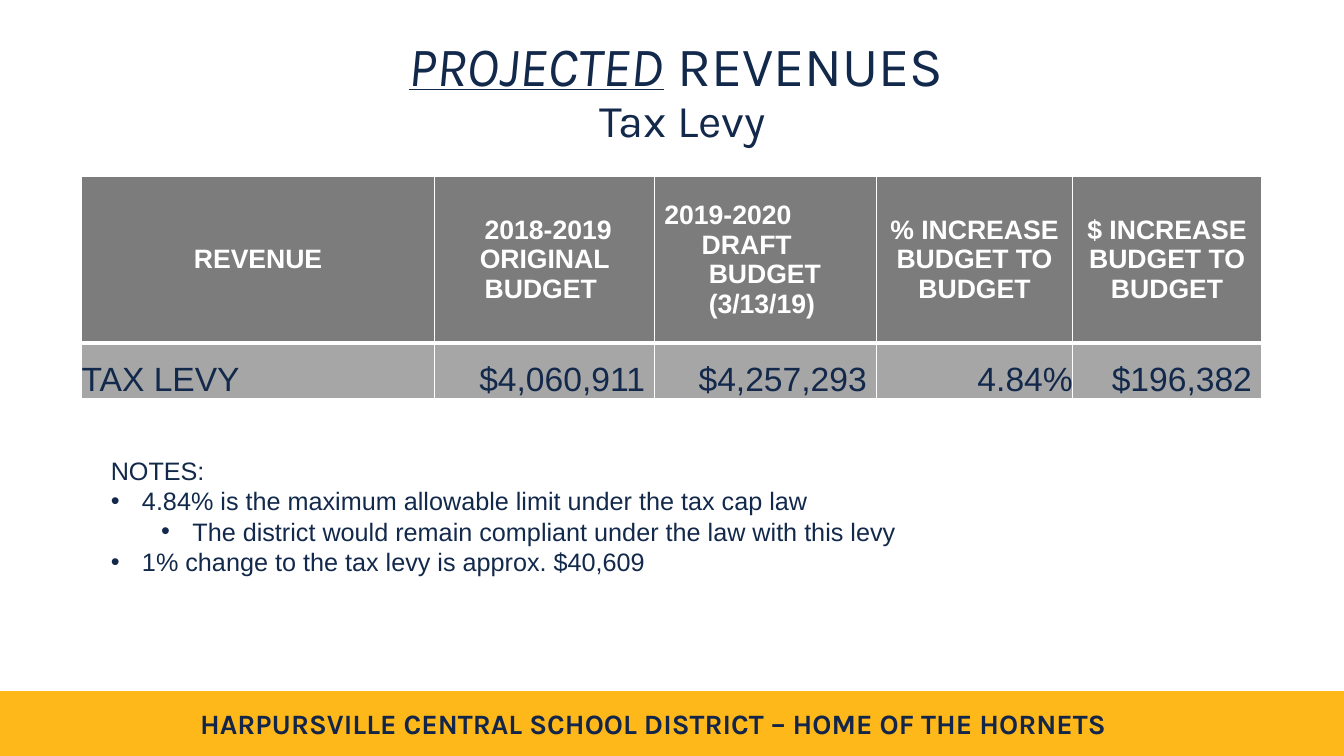
from lxml.etree import SubElement
from pptx import Presentation
from pptx.dml.color import RGBColor
from pptx.enum.shapes import MSO_SHAPE as Shape
from pptx.enum.text import MSO_ANCHOR as Anchor, PP_ALIGN as Align
from pptx.oxml.ns import qn
from pptx.util import Inches, Pt

NAVY = RGBColor(0x13, 0x29, 0x4B)
FOOTER_NAVY = RGBColor(0x13, 0x26, 0x49)
GOLD = RGBColor(0xFF, 0xB8, 0x19)
WHITE = RGBColor(0xFF, 0xFF, 0xFF)
HEADER_GRAY = RGBColor(0x7C, 0x7C, 0x7C)
ROW_GRAY = RGBColor(0xA6, 0xA6, 0xA6)


def add_span(para, text, size=18, font="Arial", color=NAVY,
             bold=False, italic=False, underline=False):
    span = para.add_run()
    span.text = text
    span.font.name = font
    span.font.size = Pt(size)
    span.font.color.rgb = color
    span.font.bold = bold
    span.font.italic = italic
    span.font.underline = underline


def set_indent(para, left, hanging=0, bullet=None):
    properties = para._p.get_or_add_pPr()
    properties.set("marL", str(Inches(left)))
    properties.set("indent", str(-Inches(hanging)))
    if bullet:
        SubElement(properties, qn("a:buFont")).set("typeface", "Arial")
        SubElement(properties, qn("a:buChar")).set("char", bullet)


def set_borders(cell, **widths):
    properties = cell._tc.get_or_add_tcPr()
    for side in "LRTB":
        line = SubElement(properties, qn(f"a:ln{side}"))
        line.set("w", str(Pt(widths.get(side, 1))))
        fill = SubElement(line, qn("a:solidFill"))
        SubElement(fill, qn("a:srgbClr")).set("val", str(WHITE))


class Page:
    def __init__(self, deck):
        self.shapes = deck.slides.add_slide(deck.slide_layouts[6]).shapes

    def band(self, area, color):
        box = self.shapes.add_shape(Shape.RECTANGLE, *map(Inches, area))
        box.shadow.inherit = False
        box.fill.solid()
        box.fill.fore_color.rgb = color
        box.line.color.rgb = color
        box.line.width = Pt(1)

    def text(self, area, anchor=Anchor.TOP):
        frame = self.shapes.add_textbox(*map(Inches, area)).text_frame
        frame.word_wrap = True
        frame.vertical_anchor = anchor
        return frame

    def table(self, area, widths, heights):
        frame = self.shapes.add_table(len(heights), len(widths), *map(Inches, area))
        table = frame.table
        table.horz_banding = False
        for column, width in zip(table.columns, widths):
            column.width = Inches(width)
        for row, height in zip(table.rows, heights):
            row.height = Inches(height)
        return table

    def cell(self, cell, lines, align, fill, anchor, indents=None, borders=None, **style):
        cell.margin_left = cell.margin_right = cell.margin_top = cell.margin_bottom = 0
        cell.vertical_anchor = anchor
        set_borders(cell, **(borders or {}))
        cell.fill.solid()
        cell.fill.fore_color.rgb = fill
        frame = cell.text_frame
        for index, line in enumerate(lines):
            para = frame.add_paragraph() if index else frame.paragraphs[0]
            para.alignment = align
            if indents:
                set_indent(para, indents[index])
            add_span(para, line, **style)


def main():
    deck = Presentation()
    deck.slide_width, deck.slide_height = Inches(13.33), Inches(7.5)
    page = Page(deck)

    # Footer
    page.band((0, 6.86, 13.33, 0.63), GOLD)
    para = page.text((1.76, 6.96, 9.44, 0.44)).paragraphs[0]
    para.alignment = Align.CENTER
    add_span(para, "HARPURSVILLE CENTRAL SCHOOL DISTRICT – HOME OF THE HORNETS",
             size=20, font="Karla", color=FOOTER_NAVY, bold=True)

    # Title
    para = page.text((1.02, 0.4, 11.5, 1.04), Anchor.MIDDLE).paragraphs[0]
    para.alignment = Align.CENTER
    para.line_spacing = 0.9
    add_span(para, "PROJECTED", size=39.6, font="Karla", italic=True, underline=True)
    add_span(para, " REVENUES ", size=39.6, font="Karla")
    para.add_line_break()
    add_span(para, "Tax Levy", size=32.4, font="Karla")

    # Revenue table: each header holds its lines and their left indents
    draft_lines = ["2019-2020", "DRAFT", "BUDGET", "(3/13/19)"]
    headers = [
        (["REVENUE"], None),
        ([" 2018-2019 ORIGINAL BUDGET "], None),
        (draft_lines, [0.1, 0.47, 0.54, 0.54]),
        (["% INCREASE BUDGET TO BUDGET"], None),
        (["$ INCREASE BUDGET TO BUDGET"], None),
    ]
    values = ["TAX LEVY", "$4,060,911 ", "$4,257,293 ", "4.84%", "$196,382 "]
    table = page.table((0.81, 1.75, 11.7, 2.2), [3.5, 2.18, 2.2, 1.95, 1.87], [1.65, 0.55])
    for column, ((lines, indents), value) in enumerate(zip(headers, values)):
        page.cell(table.cell(0, column), lines, Align.LEFT if indents else Align.CENTER,
                  HEADER_GRAY, Anchor.MIDDLE, indents, {"B": 3},
                  size=19, color=WHITE, bold=True)
        page.cell(table.cell(1, column), [value], Align.RIGHT if column else Align.LEFT,
                  ROW_GRAY, Anchor.BOTTOM, borders={"T": 3}, size=24)

    # Notes
    notes = page.text((1, 4.47, 9.88, 1.31))
    add_span(notes.paragraphs[0], "NOTES:")
    for level, note in [
        (0, "4.84% is the maximum allowable limit under the tax cap law"),
        (1, "The district would remain compliant under the law with this levy"),
        (0, "1% change to the tax levy is approx. $40,609"),
    ]:
        para = notes.add_paragraph()
        para.level = level
        set_indent(para, 0.31 + 0.5 * level, 0.31, "•")
        add_span(para, note)

    deck.save("out.pptx")


if __name__ == "__main__":
    main()
